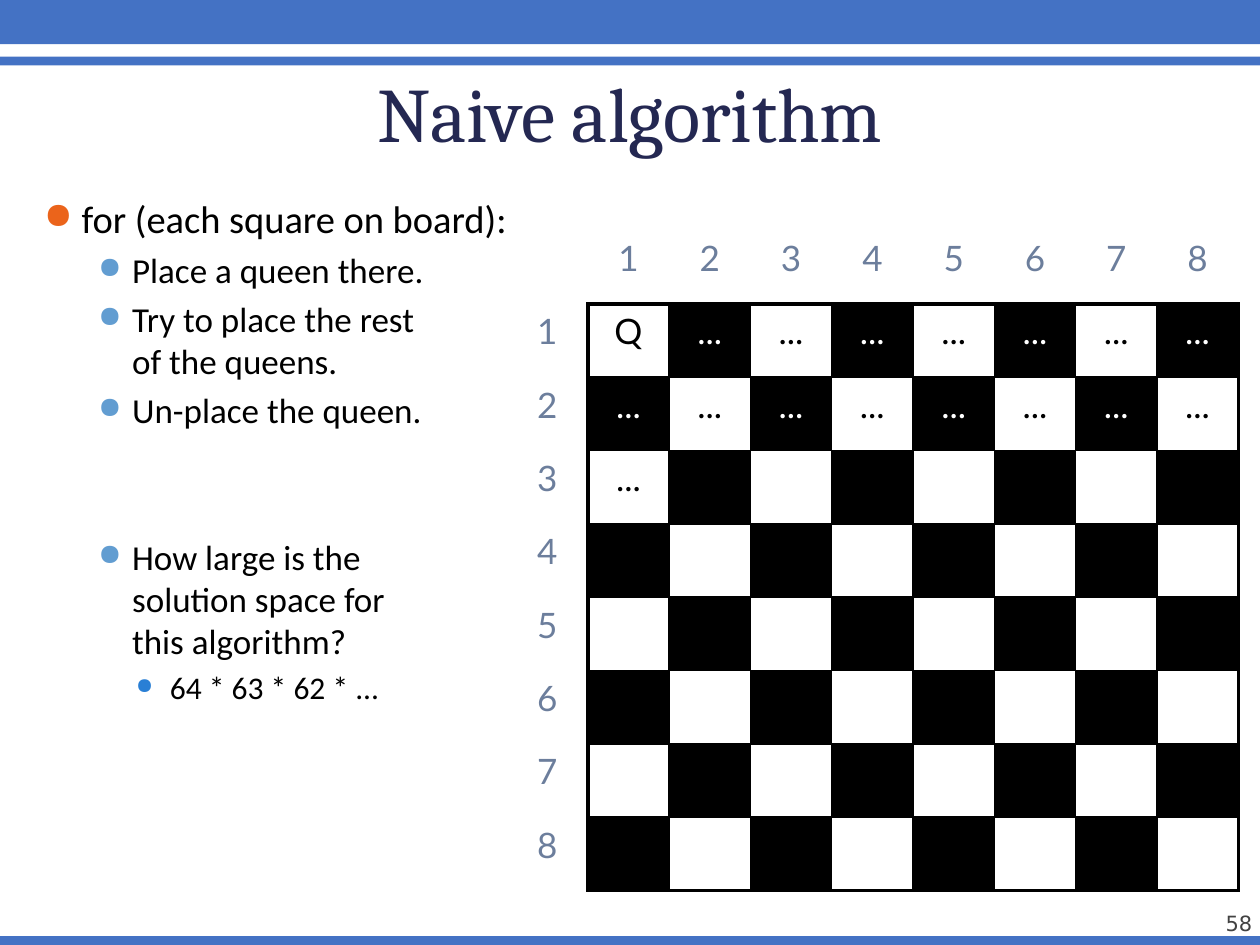
"""Builds the slide on the naive algorithm for placing queens on a chessboard."""
from dataclasses import dataclass

from lxml import etree
from pptx import Presentation
from pptx.dml.color import RGBColor
from pptx.enum.shapes import MSO_SHAPE
from pptx.enum.text import MSO_ANCHOR, MSO_AUTO_SIZE, PP_ALIGN
from pptx.oxml.ns import qn
from pptx.util import Inches, Pt

RECT = MSO_SHAPE.RECTANGLE
TOP, BOTTOM = MSO_ANCHOR.TOP, MSO_ANCHOR.BOTTOM
LEFT, CENTER, RIGHT = PP_ALIGN.LEFT, PP_ALIGN.CENTER, PP_ALIGN.RIGHT
NO_FIT = MSO_AUTO_SIZE.NONE
WIDTH, HEIGHT = Inches(10), Inches(7.5)
TITLE_ONLY = 5
BOARD_SIZE = 8
QUEEN_TRIALS = 17


@dataclass(frozen=True)
class Theme:
    """Colours, fonts, type sizes and line widths of the slide."""
    bar: str = "4472C4"
    title: tuple = ("Cambria", 44, "242852")
    number: tuple = ("DejaVu Sans", 12, "424242")
    label: tuple = ("Lato", 20, "6C7E9C")
    on_light: tuple = ("Lato", 20, "000000")
    on_dark: tuple = ("Lato", 20, "FFFFFF")
    dark: str = "000000"
    body_font: str = "Calibri"
    body_colour: str = "000000"
    body_sizes: tuple = (22, 20, 18)
    bullet_colours: tuple = ("EB641B", "629DD1", "297FD5")
    bullet_sizes: tuple = (95, 85, 70)
    indents: tuple = ((0.3, 0.3), (0.7, 0.27), (1, 0.27))
    inner_line: float = 1
    outer_line: float = 2.25


THEME = Theme()
BARS = [(0, -0.03, 10.02, 0.38), (-0.02, 0.45, 10.02, 0.07), (-0.02, 7.43, 10.02, 0.07)]
STEPS = [
    (0, "for (each square on board):", 0),
    (1, "Place a queen there.", 4),
    (1, "Try to place the rest\vof the queens.", 4),
    (1, "Un-place the queen.", 4),
    (1, "How large is the\vsolution space for\vthis algorithm?", 60),
    (2, "64 * 63 * 62 * ...", 4),
]


def set_all(obj, values):
    """Set every attribute in a dict of values."""
    for name, value in values.items():
        setattr(obj, name, value)


def write(p, text, style, align=LEFT):
    """Write a paragraph in a (font, size, colour) style."""
    font, size, colour = style
    p.text = text
    p.alignment = align
    for r in p.runs:
        set_all(r.font, {"name": font, "size": Pt(size)})
        r.font.color.rgb = RGBColor.from_string(colour)


def set_frame(tf, anchor, margins):
    """Set wrapping, anchor and left, top, right, bottom margins in inches."""
    left, top, right, bottom = map(Inches, margins)
    set_all(tf, {"word_wrap": True, "auto_size": NO_FIT, "vertical_anchor": anchor,
                 "margin_left": left, "margin_top": top,
                 "margin_right": right, "margin_bottom": bottom})


def add_bar(s, box):
    """Add a plain bar across the slide."""
    sp = s.shapes.add_shape(RECT, *map(Inches, box))
    sp.shadow.inherit = False
    sp.fill.solid()
    sp.fill.fore_color.rgb = RGBColor.from_string(THEME.bar)
    sp.line.fill.background()


def set_title(s, text):
    """Place and format the title."""
    sp = s.shapes.title
    set_all(sp, {"left": Inches(0.5), "top": Inches(0.48),
                 "width": Inches(9), "height": Inches(0.77)})
    set_frame(sp.text_frame, BOTTOM, (0, 0.05, 0, 0))
    write(sp.text_frame.paragraphs[0], text, THEME.title, CENTER)


def add_text(s, box, anchor, margins):
    """Add a text box and return its frame."""
    tf = s.shapes.add_textbox(*map(Inches, box)).text_frame
    set_frame(tf, anchor, margins)
    return tf


def set_bullet(p, level):
    """Give a paragraph the indent and bullet of its level."""
    indent, hanging = THEME.indents[level]
    pr = p._p.get_or_add_pPr()
    pr.set("marL", str(Inches(indent)))
    pr.set("indent", str(-Inches(hanging)))
    colour = etree.SubElement(pr, qn("a:buClr"))
    etree.SubElement(colour, qn("a:srgbClr"), val=THEME.bullet_colours[level])
    etree.SubElement(pr, qn("a:buSzPct"), val=str(THEME.bullet_sizes[level] * 1000))
    etree.SubElement(pr, qn("a:buChar"), char="●")


def add_steps(s, steps):
    """Add the bulleted steps of the algorithm."""
    tf = add_text(s, (0.25, 1.5, 9.75, 5.67), TOP, (0.1, 0.05, 0.1, 0.05))
    for i, (level, text, gap) in enumerate(steps):
        p = tf.add_paragraph() if i else tf.paragraphs[0]
        style = (THEME.body_font, THEME.body_sizes[level], THEME.body_colour)
        write(p, text, style)
        set_all(p, {"level": level, "space_before": Pt(gap)})
        set_bullet(p, level)


def on_board(row, col):
    """Tell squares from the labels and the outside."""
    return 1 <= row <= BOARD_SIZE and 1 <= col <= BOARD_SIZE


def set_borders(cell, row, col):
    """Draw thick lines around the board and thin ones between squares."""
    widths = (0, THEME.outer_line, THEME.inner_line)
    sides = {"L": (0, -1), "R": (0, 1), "T": (-1, 0), "B": (1, 0)}
    for side, (down, across) in sides.items():
        width = widths[on_board(row, col) + on_board(row + down, col + across)]
        ln = etree.SubElement(cell._tc.get_or_add_tcPr(), qn(f"a:ln{side}"),
                              w=str(Pt(width)))
        if width:
            fill = etree.SubElement(ln, qn("a:solidFill"))
            etree.SubElement(fill, qn("a:srgbClr"), val=THEME.dark)
        else:
            etree.SubElement(ln, qn("a:noFill"))


def cell_text(row, col):
    """Return a label, the queen, a trial mark or nothing."""
    if not on_board(row, col):
        return str(row + col) if row + col else ""
    order = (row - 1) * BOARD_SIZE + col
    if order == 1:
        return "Q"
    return "..." if order <= QUEEN_TRIALS else ""


def set_cell(cell, row, col):
    """Fill, outline and label one cell of the board table."""
    dark = on_board(row, col) and (row + col) % 2 == 1
    set_borders(cell, row, col)
    if dark:
        cell.fill.solid()
        cell.fill.fore_color.rgb = RGBColor.from_string(THEME.dark)
    else:
        cell.fill.background()
    style = THEME.on_dark if dark else THEME.on_light
    if not on_board(row, col):
        style = THEME.label
    write(cell.text_frame.paragraphs[0], cell_text(row, col), style, CENTER)


def add_board(s, box):
    """Add the chessboard with its row and column numbers."""
    count = BOARD_SIZE + 1
    table = s.shapes.add_table(count, count, *map(Inches, box)).table
    set_all(table, {"first_row": False, "horz_banding": False})
    for row in range(count):
        for col in range(count):
            set_cell(table.cell(row, col), row, col)


def main():
    """Build and save the slide."""
    prs = Presentation()
    set_all(prs, {"slide_width": WIDTH, "slide_height": HEIGHT})
    s = prs.slides.add_slide(prs.slide_layouts[TITLE_ONLY])
    for box in BARS:
        add_bar(s, box)
    tf = add_text(s, (9.11, 7.03, 0.83, 0.4), BOTTOM, (0, 0, 0, 0))
    write(tf.paragraphs[0], "58", THEME.number, RIGHT)
    set_title(s, "Naive algorithm")
    add_steps(s, STEPS)
    add_board(s, (4.02, 1.83, 5.81, 5.24))
    prs.save("out.pptx")


if __name__ == "__main__":
    main()
